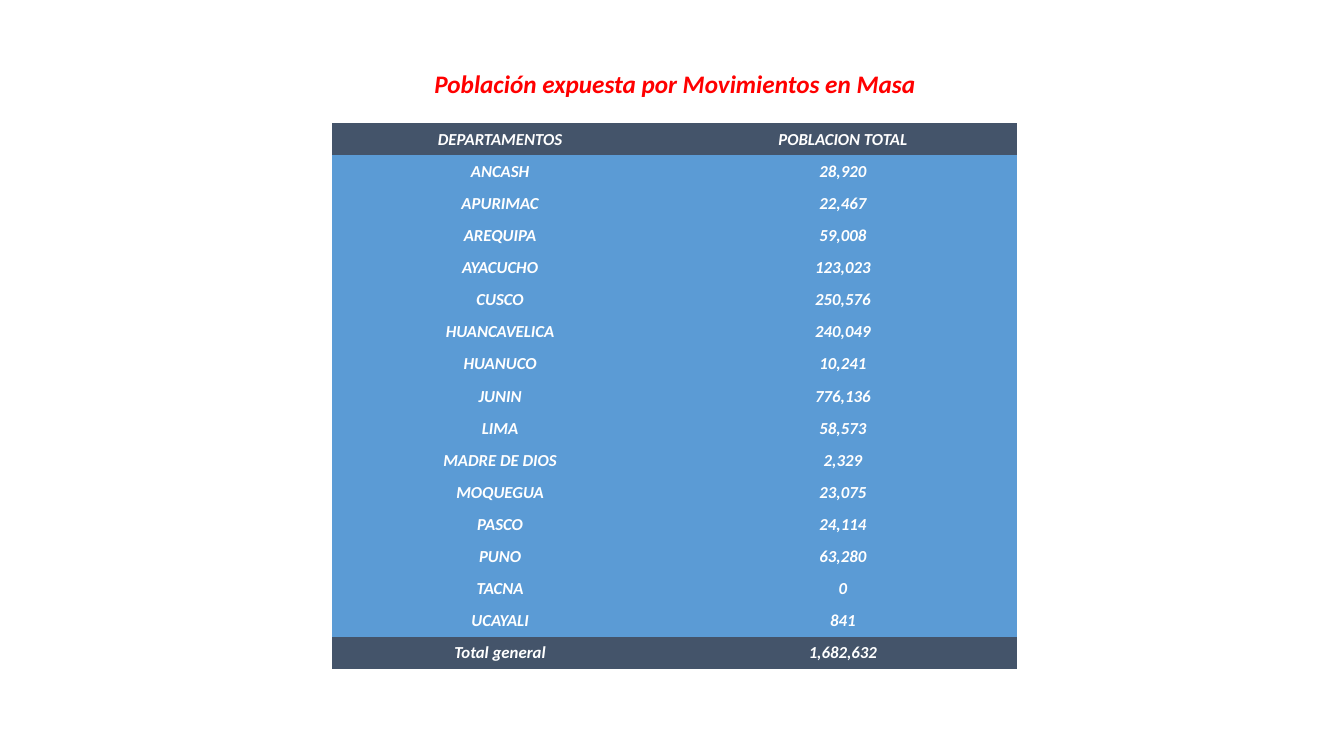
import pptx
import pptx.util
import pptx.dml.color
import pptx.enum.text
import pptx.oxml.ns

Inches = pptx.util.Inches
CENTER = pptx.enum.text.PP_ALIGN.CENTER
MIDDLE = pptx.enum.text.MSO_ANCHOR.MIDDLE
NO_STYLE = "{2D5ABB26-0587-4C30-8999-92F81FD0307C}"


def color(hex_value):
    return pptx.dml.color.RGBColor.from_string(hex_value)


def write(tf, text, size, hex_value):
    p = tf.paragraphs[0]
    p.alignment = CENTER
    r = p.add_run()
    r.text = text
    font = {"name": "Calibri", "size": pptx.util.Pt(size), "bold": True, "italic": True}
    for name, value in font.items():
        setattr(r.font, name, value)
    r.font.color.rgb = color(hex_value)


prs = pptx.Presentation()
prs.slide_width, prs.slide_height = Inches(13.33), Inches(7.5)
s = prs.slides.add_slide(prs.slide_layouts[6])

# Title
sp = s.shapes.add_textbox(Inches(4.18), Inches(0.63), Inches(5.03), Inches(0.4))
tf = sp.text_frame
tf.word_wrap = False
tf.auto_size = pptx.enum.text.MSO_AUTO_SIZE.SHAPE_TO_FIT_TEXT
write(tf, "Población expuesta por Movimientos en Masa", 18, "FF0000")

# Population by department
rows = [
    ("DEPARTAMENTOS", "POBLACION TOTAL"),
    ("ANCASH", "28,920"),
    ("APURIMAC", "22,467"),
    ("AREQUIPA", "59,008"),
    ("AYACUCHO", "123,023"),
    ("CUSCO", "250,576"),
    ("HUANCAVELICA", "240,049"),
    ("HUANUCO", "10,241"),
    ("JUNIN", "776,136"),
    ("LIMA", "58,573"),
    ("MADRE DE DIOS", "2,329"),
    ("MOQUEGUA", "23,075"),
    ("PASCO", "24,114"),
    ("PUNO", "63,280"),
    ("TACNA", "0"),
    ("UCAYALI", "841"),
    ("Total general", "1,682,632"),
]
frame = s.shapes.add_table(len(rows), 2, Inches(3.29), Inches(1.22), Inches(6.8), Inches(5.42))
table = frame.table
for column, width in zip(table.columns, (3.34, 3.46)):
    column.width = Inches(width)

# Plain table style without borders or bands
table.horz_banding = False
for style in frame.element.iter(pptx.oxml.ns.qn("a:tableStyleId")):
    style.text = NO_STYLE

# Cells: dark header and total, blue body
cell_format = {
    "vertical_anchor": MIDDLE,
    "margin_left": Inches(0.01),
    "margin_top": Inches(0.01),
    "margin_right": Inches(0.01),
    "margin_bottom": 0,
}
for i, row in enumerate(rows):
    table.rows[i].height = Inches(5.42 / len(rows))
    fill = "44546A" if i in (0, len(rows) - 1) else "5B9BD5"
    for j, text in enumerate(row):
        cell = table.cell(i, j)
        for name, value in cell_format.items():
            setattr(cell, name, value)
        cell.fill.solid()
        cell.fill.fore_color.rgb = color(fill)
        write(cell.text_frame, text, 12, "FFFFFF")

prs.save("out.pptx")
